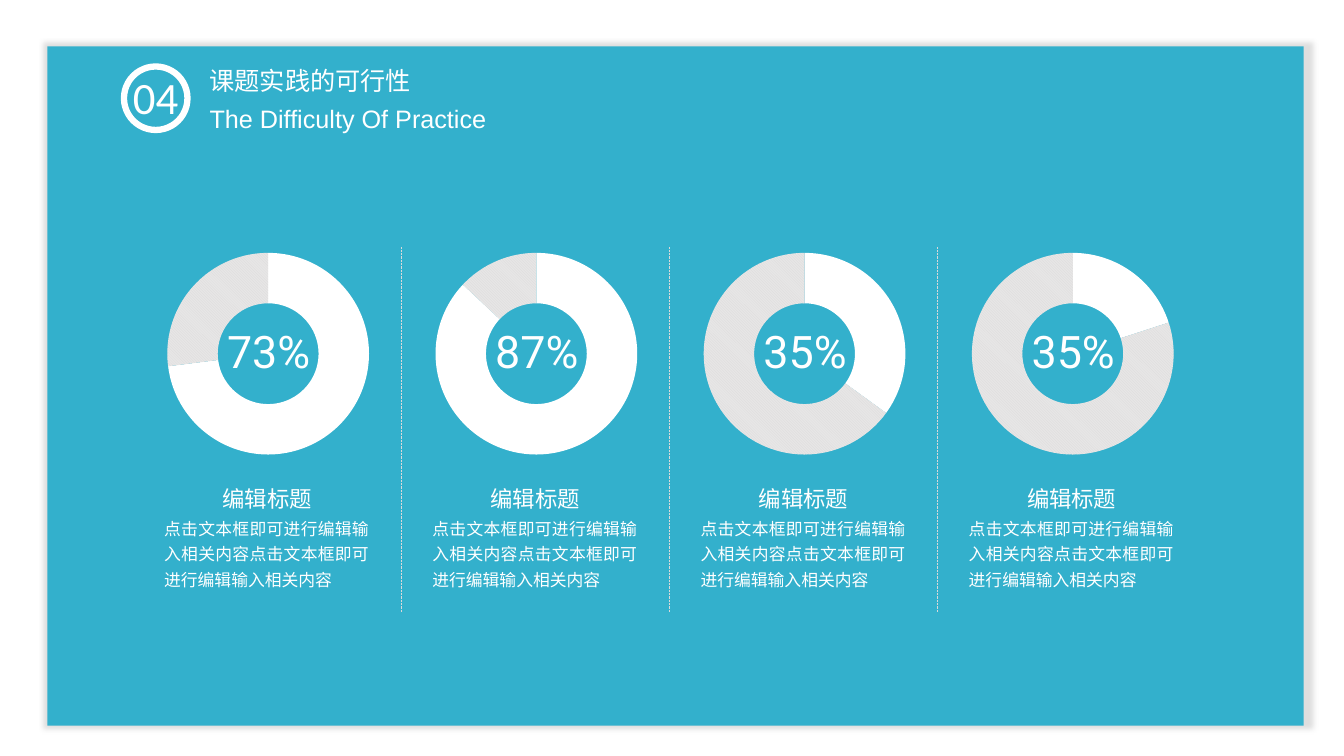
from lxml import etree
from pptx import Presentation
from pptx.chart.data import CategoryChartData
from pptx.dml.color import RGBColor
from pptx.enum import chart as charts, dml, shapes, text
from pptx.oxml import parse_xml
from pptx.oxml.ns import nsdecls, qn
from pptx.util import Inches, Pt

# Content
NUMBER = "04"
TITLE = "课题实践的可行性"
SUBTITLE = "The Difficulty Of Practice"
HEADING = "编辑标题"
BODY = "点击文本框即可进行编辑输入相关内容点击文本框即可进行编辑输入相关内容"
RINGS = [("73%", 73), ("87%", 87), ("35%", 35), ("35%", 20)]  # label, share drawn

TEAL, WHITE, GREY, PALE = "33B0CC", "FFFFFF", "D9D9D9", "E7E6E6"
CHINESE = "Noto Sans CJK SC"
STEP = 2.66  # distance between columns
LEFT, CENTER, JUSTIFY = text.PP_ALIGN.LEFT, text.PP_ALIGN.CENTER, text.PP_ALIGN.JUSTIFY


def color(value):
    return RGBColor.from_string(value)


def box(*lengths):
    return [Inches(length) for length in lengths]


def write(shape, words, size, font, align=LEFT, grow=True):
    frame = shape.text_frame
    frame.word_wrap = True
    frame.vertical_anchor = text.MSO_ANCHOR.TOP
    if grow:
        frame.auto_size = text.MSO_AUTO_SIZE.SHAPE_TO_FIT_TEXT
    paragraph = frame.paragraphs[0]
    paragraph.alignment = align
    run = paragraph.add_run()
    run.text = words
    run.font.size = Pt(size)
    run.font.name = font
    run.font.color.rgb = color(WHITE)
    east_asian = etree.SubElement(run.font._element, qn("a:ea"))
    east_asian.set("typeface", font)
    return paragraph


def add_text(place, words, size, font, align=LEFT, grow=True):
    return write(slide.shapes.add_textbox(*box(*place)), words, size, font, align, grow)


def add_ring(place, share):
    data = CategoryChartData()
    data.categories = ["1", "2"]
    data.add_series("Series 1", (share, 100 - share))
    ring = slide.shapes.add_chart(charts.XL_CHART_TYPE.DOUGHNUT, *box(*place), data).chart
    ring.has_legend = False
    ring.has_title = False
    ring.font.size = Pt(18)
    ring.font.name = "Calibri"
    ring.font.color.rgb = color("808080")
    plot = ring.plots[0]
    plot.vary_by_categories = False
    plot._element.find(qn("c:holeSize")).set("val", "82")

    done, rest = (plot.series[0].points[i].format for i in range(2))
    done.fill.solid()
    done.fill.fore_color.rgb = color(WHITE)
    rest.fill.patterned()
    rest.fill.pattern = dml.MSO_PATTERN.DARK_DOWNWARD_DIAGONAL
    rest.fill.fore_color.rgb = color(GREY)
    rest.fill.back_color.rgb = color(PALE)
    for part in (done, rest):
        part.line.fill.background()

    # Fixed plot area, two inches across
    area = ring._chartSpace.chart.plotArea
    for old in area.findall(qn("c:layout")):
        area.remove(old)
    area.insert(0, parse_xml(
        f'<c:layout {nsdecls("c")}><c:manualLayout><c:layoutTarget val="inner"/>'
        '<c:xMode val="edge"/><c:yMode val="edge"/><c:x val="0.155"/><c:y val="0.06"/>'
        '<c:w val="0.69"/><c:h val="0.88"/></c:manualLayout></c:layout>'))


def add_divider(x):
    divider = slide.shapes.add_connector(
        shapes.MSO_CONNECTOR.STRAIGHT, *box(x, 2.45, x, 6.07))
    divider.line.color.rgb = color(GREY)
    divider.line.width = Pt(0.5)
    divider.line.dash_style = dml.MSO_LINE.ROUND_DOT
    etree.SubElement(divider._element.spPr, qn("a:effectLst"))


deck = Presentation()
deck.slide_width, deck.slide_height = box(13.33, 7.5)
slide = deck.slides.add_slide(deck.slide_layouts[6])

# Panel with a soft shadow
panel = slide.shapes.add_shape(shapes.MSO_SHAPE.RECTANGLE, *box(0.47, 0.46, 12.46, 6.74))
panel.fill.solid()
panel.fill.fore_color.rgb = color(TEAL)
panel.line.fill.background()
panel._element.spPr.append(parse_xml(
    f'<a:effectLst {nsdecls("a")}><a:outerShdw blurRad="{Pt(4)}" dist="{Pt(2)}" dir="0" '
    'sx="101000" sy="101000" algn="ctr" rotWithShape="0"><a:srgbClr val="A6A6A6">'
    '<a:alpha val="36000"/></a:srgbClr></a:outerShdw></a:effectLst>'))

# Header
badge = slide.shapes.add_shape(shapes.MSO_SHAPE.OVAL, *box(1.23, 0.66, 0.63, 0.63))
badge.shadow.inherit = False
badge.fill.background()
badge.line.color.rgb = color(WHITE)
badge.line.width = Pt(4.5)
add_text((1.11, 0.64, 0.87, 0.64), NUMBER, 32, "Calibri", CENTER)
add_text((1.98, 0.6, 5.42, 0.4), TITLE, 18, CHINESE)
subtitle = slide.shapes.add_shape(
    shapes.MSO_SHAPE.SNIP_1_RECTANGLE, *box(1.98, 0.98, 5.49, 0.4))
subtitle.adjustments[0] = 0
subtitle.shadow.inherit = False
subtitle.fill.background()
subtitle.line.fill.background()
write(subtitle, SUBTITLE, 18, "Arial")

# Columns: ring, percentage, body, heading, with dividers between
for column, (label, share) in enumerate(RINGS):
    shift = column * STEP
    add_ring((1.21 + shift, 2.37, 2.9, 2.28), share)
    percent = add_text((2.08 + shift, 3.21, 1.17, 0.43), label, 32, "Roboto", CENTER, False)
    percent.space_before = Pt(6.4)
    frame = percent._parent
    frame.margin_left = frame.margin_right = frame.margin_top = frame.margin_bottom = 0
    body = add_text((1.53 + shift, 5.05, 2.23, 0.86), BODY, 12, CHINESE, JUSTIFY)
    body.line_spacing = 1.25
    add_text((1.9 + shift, 4.76, 1.5, 0.37), HEADING, 16, CHINESE, CENTER)
    if column < len(RINGS) - 1:
        add_divider(3.98 + shift)

deck.save("out.pptx")
